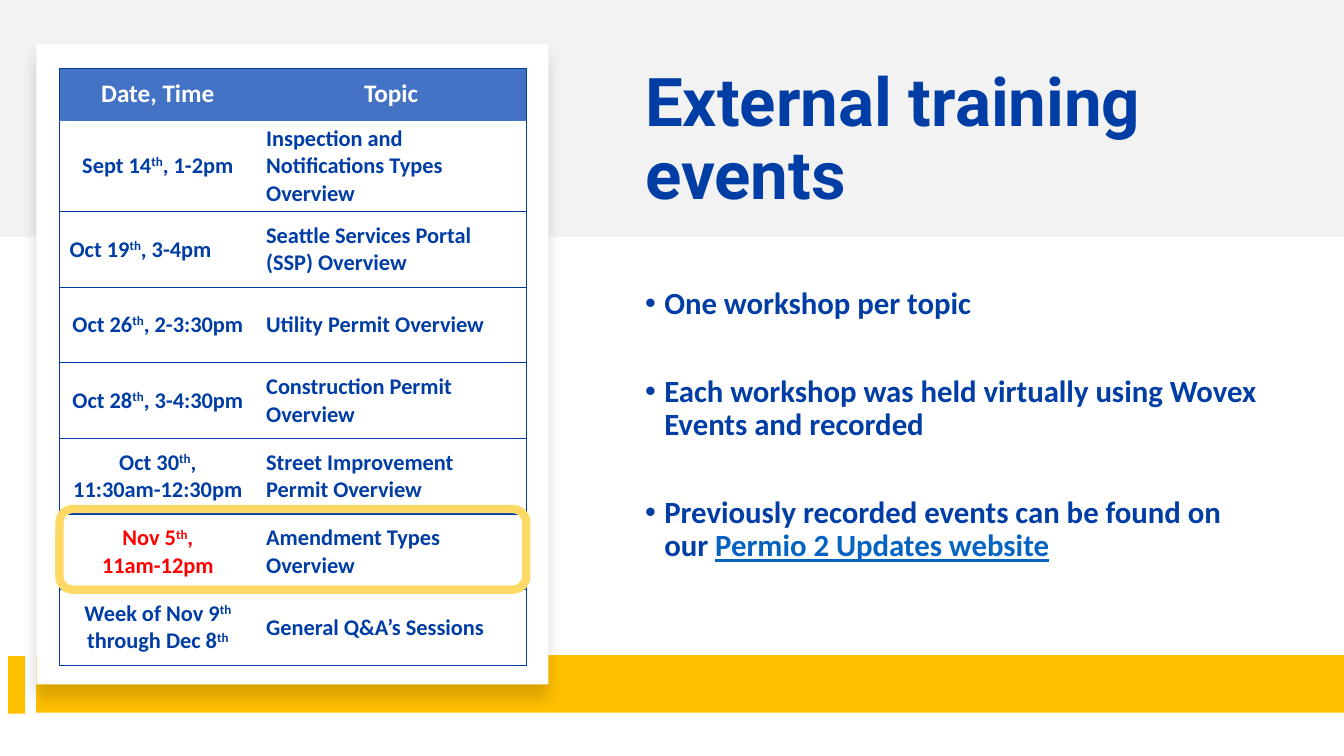
from lxml import etree
from pptx import Presentation
from pptx.dml.color import RGBColor
from pptx.enum.shapes import MSO_SHAPE
from pptx.enum.text import MSO_ANCHOR, PP_ALIGN
from pptx.oxml import parse_xml
from pptx.oxml.ns import nsdecls, qn
from pptx.util import Inches, Pt

COLORS = {
    "blue": "003DA5", "header": "4472C4", "gold": "FFC000", "highlight": "FFD966",
    "band": "F2F2F2", "white": "FFFFFF", "red": "FF0000", "link": "0563C1",
}

presentation = Presentation()
presentation.slide_width = Inches(13.33)
presentation.slide_height = Inches(7.5)
slide = presentation.slides.add_slide(presentation.slide_layouts[6])


def add_run(paragraph, text, size, color="blue", font="Calibri"):
    run = paragraph.add_run()
    run.text = text
    run.font.name = font
    run.font.size = Pt(size)
    run.font.bold = True
    run.font.color.rgb = RGBColor.from_string(COLORS[color])
    return run


def set_border(cell, side, color, width):
    properties = cell._tc.get_or_add_tcPr()
    line = etree.SubElement(properties, qn(f"a:ln{side}"), w=str(Pt(width)))
    if color is None:
        etree.SubElement(line, qn("a:noFill"))
    else:
        fill = etree.SubElement(line, qn("a:solidFill"))
        etree.SubElement(fill, qn("a:srgbClr"), val=COLORS[color])


# Background band, gold bars and white card
for left, top, width, height, color in [
    (0, 0, 13.33, 2.35, "band"),
    (0.08, 6.51, 0.17, 0.57, "gold"),
    (0.36, 6.5, 12.97, 0.57, "gold"),
    (0.36, 0.44, 5.08, 6.35, "white"),
]:
    shape = slide.shapes.add_shape(
        MSO_SHAPE.RECTANGLE, Inches(left), Inches(top), Inches(width), Inches(height))
    shape.shadow.inherit = False
    shape.fill.solid()
    shape.fill.fore_color.rgb = RGBColor.from_string(COLORS[color])
    shape.line.fill.background()

# Soft shadow under the card, the last shape added
effects = shape._element.spPr.find(qn("a:effectLst"))
effects.append(parse_xml(
    f'<a:outerShdw {nsdecls("a")} blurRad="{Pt(11)}" dist="{Pt(10)}" dir="5400000" '
    'algn="t" rotWithShape="0"><a:srgbClr val="000000"><a:alpha val="15000"/>'
    '</a:srgbClr></a:outerShdw>'))

# Title
title = slide.shapes.add_textbox(Inches(6.3), Inches(0.38), Inches(6.39), Inches(1.79))
title.text_frame.word_wrap = True
title.text_frame.vertical_anchor = MSO_ANCHOR.BOTTOM
paragraph = title.text_frame.paragraphs[0]
paragraph.line_spacing = 0.9
add_run(paragraph, "External training events", 48, font="Roboto")

# Bullet list
bullets = [
    [("One workshop per topic", "blue")],
    [("Each workshop was held virtually using Wovex Events and recorded", "blue")],
    [("Previously recorded events can be found on our ", "blue"),
     ("Permio 2 Updates website", "link")],
]
body = slide.shapes.add_textbox(Inches(6.3), Inches(2.81), Inches(6.38), Inches(3))
body.text_frame.word_wrap = True
for index, parts in enumerate(bullets):
    paragraph = body.text_frame.paragraphs[0] if index == 0 else body.text_frame.add_paragraph()
    paragraph.line_spacing = 0.9
    if index:
        paragraph.space_before = Pt(39)
    properties = paragraph._p.get_or_add_pPr()
    properties.set("marL", str(Inches(0.19)))
    properties.set("indent", str(-Inches(0.19)))
    etree.SubElement(properties, qn("a:buFont"), typeface="Arial")
    etree.SubElement(properties, qn("a:buChar"), char="•")
    for text, color in parts:
        run = add_run(paragraph, text, 22, color)
        run.font.underline = color == "link"

# Schedule: date parts alternate between normal and superscript
schedule = [
    (["Date, Time"], "Topic"),
    (["Sept 14", "th", ", 1-2pm"], "Inspection and Notifications Types Overview"),
    (["Oct 19", "th", ", 3-4pm"], "Seattle Services Portal (SSP) Overview"),
    (["Oct 26", "th", ", 2-3:30pm"], "Utility Permit Overview"),
    (["Oct 28", "th", ", 3-4:30pm"], "Construction Permit Overview"),
    (["Oct 30", "th", ", 11:30am-12:30pm"], "Street Improvement Permit Overview"),
    (["Nov 5", "th", ", 11am-12pm"], "Amendment Types Overview"),
    (["Week of Nov 9", "th", " through Dec 8", "th"], "General Q&A’s Sessions"),
]
LEFT_ALIGNED_DATE, RED_DATE = 2, 6
table = slide.shapes.add_table(
    len(schedule), 2, Inches(0.59), Inches(0.68), Inches(4.63), Inches(5.92)).table
table.horz_banding = False
table.columns[0].width = Inches(1.95)
table.columns[1].width = Inches(2.68)
for row, (date, topic) in enumerate(schedule):
    table.rows[row].height = Inches({0: 0.51, 1: 0.91}.get(row, 0.75))
    for column, parts in enumerate((date, [topic])):
        cell = table.cell(row, column)
        cell.vertical_anchor = MSO_ANCHOR.MIDDLE
        set_border(cell, "L", "blue" if column == 0 else None, 1)
        set_border(cell, "R", "blue" if column == 1 else None, 1)
        set_border(cell, "T", "header" if row == 1 else "blue", 0.5 if row == 1 else 1)
        set_border(cell, "B", "header" if row == 0 else "blue", 0.5 if row == 0 else 1)
        cell.fill.solid()
        cell.fill.fore_color.rgb = RGBColor.from_string(COLORS["white" if row else "header"])
        paragraph = cell.text_frame.paragraphs[0]
        centered = row == 0 or (column == 0 and row != LEFT_ALIGNED_DATE)
        paragraph.alignment = PP_ALIGN.CENTER if centered else PP_ALIGN.LEFT
        color = "white" if row == 0 else "red" if (row, column) == (RED_DATE, 0) else "blue"
        for position, text in enumerate(parts):
            run = add_run(paragraph, text, 16 if row else 18, color)
            if position % 2:
                run.font._element.set("baseline", "30000")

# Highlight around the November 5 row
highlight = slide.shapes.add_shape(
    MSO_SHAPE.FLOWCHART_ALTERNATE_PROCESS, Inches(0.59), Inches(5.05), Inches(4.63), Inches(0.8))
highlight.shadow.inherit = False
highlight.fill.background()
highlight.line.color.rgb = RGBColor.from_string(COLORS["highlight"])
highlight.line.width = Pt(6)

presentation.save("out.pptx")
